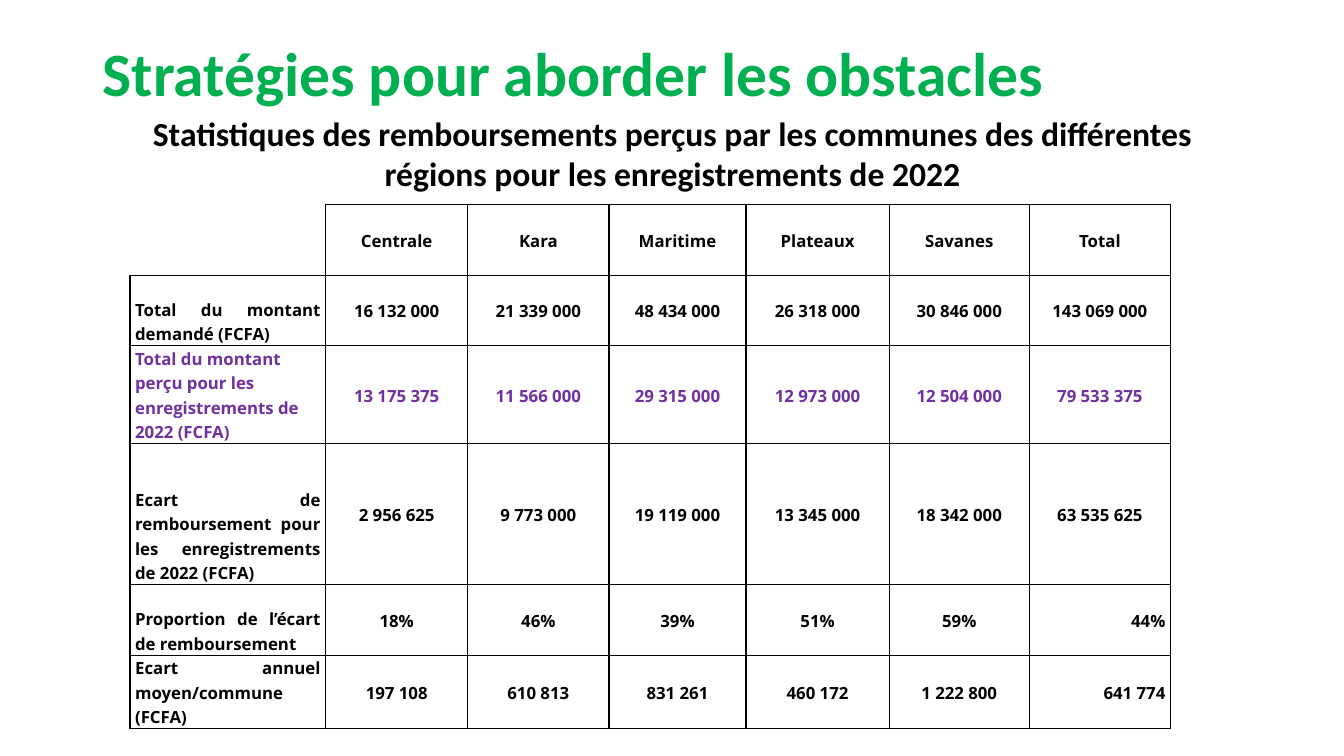
from dataclasses import dataclass

from lxml.etree import SubElement
from pptx import Presentation
from pptx.dml.color import RGBColor
from pptx.enum.text import MSO_ANCHOR, MSO_AUTO_SIZE, PP_ALIGN
from pptx.oxml import parse_xml
from pptx.oxml.ns import nsdecls, qn
from pptx.util import Inches, Pt


@dataclass(frozen=True)
class Theme:
    heading_font: str = "Calibri"
    table_font: str = "Open Sans"
    green: str = "00B050"
    purple: str = "7030A0"
    black: str = "000000"
    title_size: int = 44
    subtitle_size: int = 24
    table_size: int = 12
    border_width: int = 1


THEME = Theme()

REGIONS = ["", "Centrale", "Kara", "Maritime", "Plateaux", "Savanes", "Total"]
STATISTICS = [
    ["Total du montant demandé (FCFA)",
     "16 132 000", "21 339 000", "48 434 000", "26 318 000", "30 846 000", "143 069 000"],
    ["Total du montant perçu pour les enregistrements de 2022 (FCFA)",
     "13 175 375", "11 566 000", "29 315 000", "12 973 000", "12 504 000", "79 533 375"],
    ["Ecart de remboursement pour les enregistrements de 2022 (FCFA)",
     "2 956 625", "9 773 000", "19 119 000", "13 345 000", "18 342 000", "63 535 625"],
    ["Proportion de l’écart de remboursement",
     "18%", "46%", "39%", "51%", "59%", "44%"],
    ["Ecart annuel moyen/commune (FCFA)",
     "197 108", "610 813", "831 261", "460 172", "1 222 800", "641 774"],
]
COLUMN_WIDTHS = [1.94, 1.41, 1.4, 1.36, 1.42, 1.39, 1.4]
ROW_HEIGHTS = [0.7, 0.7, 0.91, 1.4, 0.7, 0.7]
RECEIVED_ROW = 2
FIRST_RIGHT_ALIGNED_ROW = 4


def place(shape, box):
    shape.left, shape.top, shape.width, shape.height = (Inches(length) for length in box)


def add_run(paragraph, text, font_name, size, color):
    run = paragraph.add_run()
    run.text = text
    run.font.name = font_name
    run.font.size = Pt(size)
    run.font.bold = True
    run.font.color.rgb = RGBColor.from_string(color)


def fill_title(title, box):
    place(title, box)
    frame = title.text_frame
    frame.auto_size = MSO_AUTO_SIZE.NONE
    frame.vertical_anchor = MSO_ANCHOR.MIDDLE
    paragraph = frame.paragraphs[0]
    paragraph.alignment = PP_ALIGN.LEFT
    paragraph.line_spacing = 0.9
    add_run(paragraph, "Stratégies pour aborder les obstacles",
            THEME.heading_font, THEME.title_size, THEME.green)


def fill_subtitle(body, box):
    place(body, box)
    frame = body.text_frame
    frame.auto_size = MSO_AUTO_SIZE.NONE
    paragraph = frame.paragraphs[0]
    paragraph.alignment = PP_ALIGN.CENTER
    paragraph.space_before = Pt(10)
    paragraph.space_after = Pt(6)
    properties = paragraph._p.get_or_add_pPr()
    properties.set("marL", "0")
    properties.set("indent", "0")
    SubElement(properties, qn("a:buNone"))
    add_run(paragraph,
            "Statistiques des remboursements perçus par les communes "
            "des différentes régions pour les enregistrements de 2022",
            THEME.heading_font, THEME.subtitle_size, THEME.black)


def set_borders(cell, visible_sides):
    properties = cell._tc.get_or_add_tcPr()
    for position, side in enumerate("LRTB"):
        if side in visible_sides:
            paint = f'<a:solidFill><a:srgbClr val="{THEME.black}"/></a:solidFill>'
        else:
            paint = "<a:noFill/>"
        line = parse_xml(
            f'<a:ln{side} {nsdecls("a")} w="{Pt(THEME.border_width)}">{paint}</a:ln{side}>')
        properties.insert(position, line)


def cell_layout(row, column):
    if column == 0 and row == RECEIVED_ROW:
        return PP_ALIGN.LEFT, MSO_ANCHOR.TOP
    if column == 0:
        return PP_ALIGN.JUSTIFY, MSO_ANCHOR.BOTTOM
    if column == len(REGIONS) - 1 and row >= FIRST_RIGHT_ALIGNED_ROW:
        return PP_ALIGN.RIGHT, MSO_ANCHOR.MIDDLE
    return PP_ALIGN.CENTER, MSO_ANCHOR.MIDDLE


def fill_cell(cell, text, row, column):
    cell.fill.background()
    set_borders(cell, "LRTB" if text else "RB")
    if not text:
        return
    cell.margin_left = cell.margin_right = Inches(0.05)
    cell.margin_top = cell.margin_bottom = 0
    alignment, cell.vertical_anchor = cell_layout(row, column)
    paragraph = cell.text_frame.paragraphs[0]
    paragraph.alignment = alignment
    paragraph.line_spacing = 1.07
    color = THEME.purple if row == RECEIVED_ROW else THEME.black
    add_run(paragraph, text, THEME.table_font, THEME.table_size, color)


def add_statistics_table(slide, box):
    rows = [REGIONS, *STATISTICS]
    shape = slide.shapes.add_table(
        len(rows), len(REGIONS), *(Inches(length) for length in box))
    table = shape.table
    table.first_row = False
    table.horz_banding = False
    for column, width in zip(table.columns, COLUMN_WIDTHS):
        column.width = Inches(width)
    for row, height in zip(table.rows, ROW_HEIGHTS):
        row.height = Inches(height)
    for row_index, texts in enumerate(rows):
        for column_index, text in enumerate(texts):
            fill_cell(table.cell(row_index, column_index), text, row_index, column_index)


def build_strategy_slide(presentation):
    slide = presentation.slides.add_slide(presentation.slide_layouts[1])
    fill_title(slide.shapes.title, (0.92, 0.28, 11.5, 0.96))
    fill_subtitle(slide.placeholders[1], (0.92, 1.07, 11.5, 6.26))
    add_statistics_table(slide, (1.29, 2.03, sum(COLUMN_WIDTHS), sum(ROW_HEIGHTS)))


def main():
    presentation = Presentation()
    presentation.slide_width = Inches(13.33)
    presentation.slide_height = Inches(7.5)
    build_strategy_slide(presentation)
    presentation.save("out.pptx")


if __name__ == "__main__":
    main()
